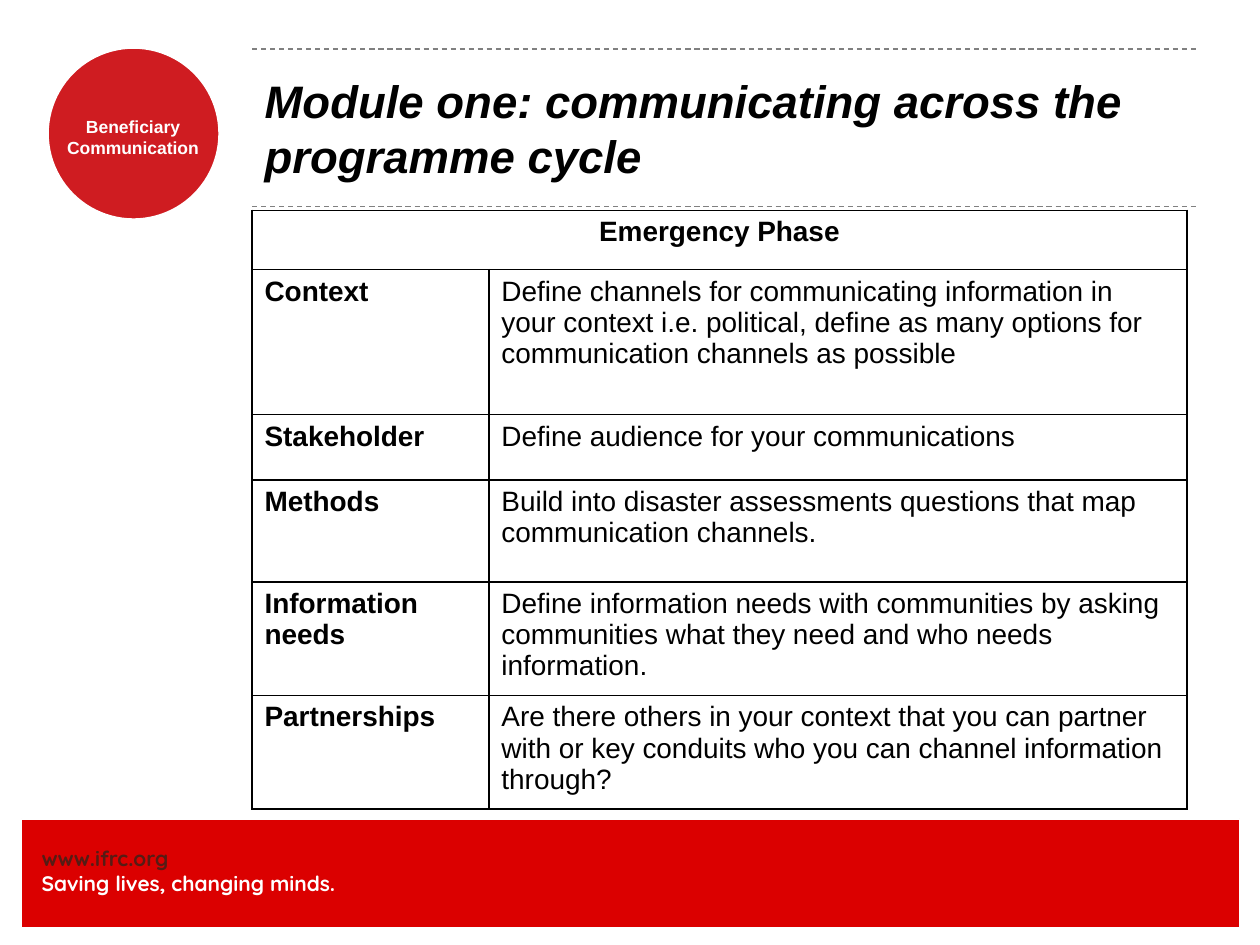
from dataclasses import dataclass

from lxml import etree
from pptx import Presentation
from pptx.dml.color import RGBColor
from pptx.enum.dml import MSO_LINE
from pptx.enum.shapes import MSO_CONNECTOR, MSO_SHAPE
from pptx.enum.text import MSO_ANCHOR, PP_ALIGN
from pptx.oxml.ns import qn
from pptx.util import Inches, Pt

STRAIGHT = MSO_CONNECTOR.STRAIGHT
RECTANGLE, OVAL = MSO_SHAPE.RECTANGLE, MSO_SHAPE.OVAL
DASH = MSO_LINE.DASH
MIDDLE = MSO_ANCHOR.MIDDLE
LEFT, CENTER = PP_ALIGN.LEFT, PP_ALIGN.CENTER

BLACK = RGBColor(0x00, 0x00, 0x00)
WHITE = RGBColor(0xFF, 0xFF, 0xFF)
GREY = RGBColor(0x80, 0x80, 0x80)
BANNER_RED = RGBColor(0xDB, 0x00, 0x00)
BADGE_RED = RGBColor(0xCF, 0x1C, 0x21)
ADDRESS_BROWN = RGBColor(0x55, 0x1C, 0x15)

SLIDE_W, SLIDE_H = 10, 7.5
CONTENT_X = SLIDE_W * 0.2
CONTENT_W = SLIDE_W * 0.75
HEADER_Y, HEADER_H = 0.39, 1.25
TABLE_Y = 1.67
COLUMN_WIDTHS = (1.88, 5.54)
HEADING_HEIGHT = 0.47


@dataclass(frozen=True)
class Box:
    x: float
    y: float
    w: float
    h: float

    def emu(self) -> tuple:
        return tuple(Inches(v) for v in (self.x, self.y, self.w, self.h))


@dataclass(frozen=True)
class TextStyle:
    size: float
    color: RGBColor
    font: str = "Arial"
    bold: bool = True
    italic: bool = False
    align: PP_ALIGN = LEFT


@dataclass(frozen=True)
class PhaseRow:
    topic: str
    action: str
    height: float


PHASE_ROWS = (
    PhaseRow("Context", "Define channels for communicating information in your context "
             "i.e. political, define as many options for communication channels "
             "as possible", 1.15),
    PhaseRow("Stakeholder", "Define audience for your communications", 0.52),
    PhaseRow("Methods", "Build into disaster assessments questions that map "
             "communication channels.", 0.81),
    PhaseRow("Information needs", "Define information needs with communities by asking "
             "communities what they need and who needs information.", 0.81),
    PhaseRow("Partnerships", "Are there others in your context that you can partner with "
             "or key conduits who you can channel information through?", 0.81),
)


def write(frame, text: str, *styles: TextStyle) -> None:
    """Fill a text frame, with one style per paragraph."""
    frame.text = text
    for paragraph, style in zip(frame.paragraphs, styles):
        paragraph.alignment = style.align
        for run in paragraph.runs:
            run.font.name = style.font
            run.font.size = Pt(style.size)
            run.font.bold = style.bold
            run.font.italic = style.italic
            run.font.color.rgb = style.color


def add_panel(slide, kind, box: Box, fill: RGBColor, line_width: float) -> None:
    panel = slide.shapes.add_shape(kind, *box.emu())
    panel.shadow.inherit = False
    panel.fill.solid()
    panel.fill.fore_color.rgb = fill
    panel.line.color.rgb = WHITE
    panel.line.width = Pt(line_width)


def add_label(slide, box: Box, text: str, *styles: TextStyle) -> None:
    frame = slide.shapes.add_textbox(*box.emu()).text_frame
    frame.word_wrap = True
    frame.margin_left = frame.margin_right = 0
    frame.margin_top = frame.margin_bottom = 0
    write(frame, text, *styles)


def add_rule(slide, y: float) -> None:
    ends = (CONTENT_X, y, CONTENT_X + CONTENT_W, y)
    rule = slide.shapes.add_connector(STRAIGHT, *(Inches(v) for v in ends))
    rule.line.color.rgb = GREY
    rule.line.width = Pt(0.75)
    rule.line.dash_style = DASH
    properties = rule._element.find(qn("p:spPr"))
    etree.SubElement(properties, qn("a:effectLst"))


def format_cell(cell) -> None:
    """Clear the fill and draw a thin black border on every side."""
    cell.fill.background()
    properties = cell._tc.get_or_add_tcPr()
    for position, side in enumerate(("a:lnL", "a:lnR", "a:lnT", "a:lnB")):
        border = etree.Element(qn(side), w=str(Pt(1)))
        fill = etree.SubElement(border, qn("a:solidFill"))
        etree.SubElement(fill, qn("a:srgbClr"), val=str(BLACK))
        properties.insert(position, border)


def add_phase_table(slide) -> None:
    heights = (HEADING_HEIGHT, *(row.height for row in PHASE_ROWS))
    box = Box(CONTENT_X, TABLE_Y, sum(COLUMN_WIDTHS), sum(heights))
    table = slide.shapes.add_table(len(heights), len(COLUMN_WIDTHS), *box.emu()).table
    for column, width in zip(table.columns, COLUMN_WIDTHS):
        column.width = Inches(width)
    for row, height in zip(table.rows, heights):
        row.height = Inches(height)
    for cell in table.iter_cells():
        format_cell(cell)

    heading = table.cell(0, 0)
    heading.merge(table.cell(0, 1))
    write(heading.text_frame, "Emergency Phase", TextStyle(16, BLACK, align=CENTER))
    for number, row in enumerate(PHASE_ROWS, start=1):
        write(table.cell(number, 0).text_frame, row.topic, TextStyle(16, BLACK))
        write(table.cell(number, 1).text_frame, row.action,
              TextStyle(16, BLACK, bold=False))


def main() -> None:
    deck = Presentation()
    deck.slide_width, deck.slide_height = Inches(SLIDE_W), Inches(SLIDE_H)
    slide = deck.slides.add_slide(deck.slide_layouts.get_by_name("Title Only"))

    # Footer banner
    add_panel(slide, RECTANGLE, Box(0.17, 6.5, 9.67, 0.86), BANNER_RED, 0.75)
    add_label(slide, Box(0.33, 6.71, 3.42, 0.4),
              "www.ifrc.org\nSaving lives, changing minds.",
              TextStyle(12, ADDRESS_BROWN, "Quicksand"),
              TextStyle(12, WHITE, "Quicksand"))

    # Round badge
    add_panel(slide, OVAL, Box(0.37, 0.37, 1.38, 1.38), BADGE_RED, 2.5)
    add_label(slide, Box(0.43, 0.92, 1.25, 0.34), "Beneficiary Communication",
              TextStyle(10, WHITE, align=CENTER))

    # Title between two dashed rules
    for y in (HEADER_Y, HEADER_Y + HEADER_H):
        add_rule(slide, y)
    title = slide.shapes.title
    title.left, title.top, title.width, title.height = Box(
        CONTENT_X, HEADER_Y, CONTENT_W, HEADER_H).emu()
    title.text_frame.vertical_anchor = MIDDLE
    write(title.text_frame, "Module one: communicating across the programme cycle",
          TextStyle(26, BLACK, italic=True))

    # Emergency phase table
    add_phase_table(slide)

    deck.save("out.pptx")


if __name__ == "__main__":
    main()
